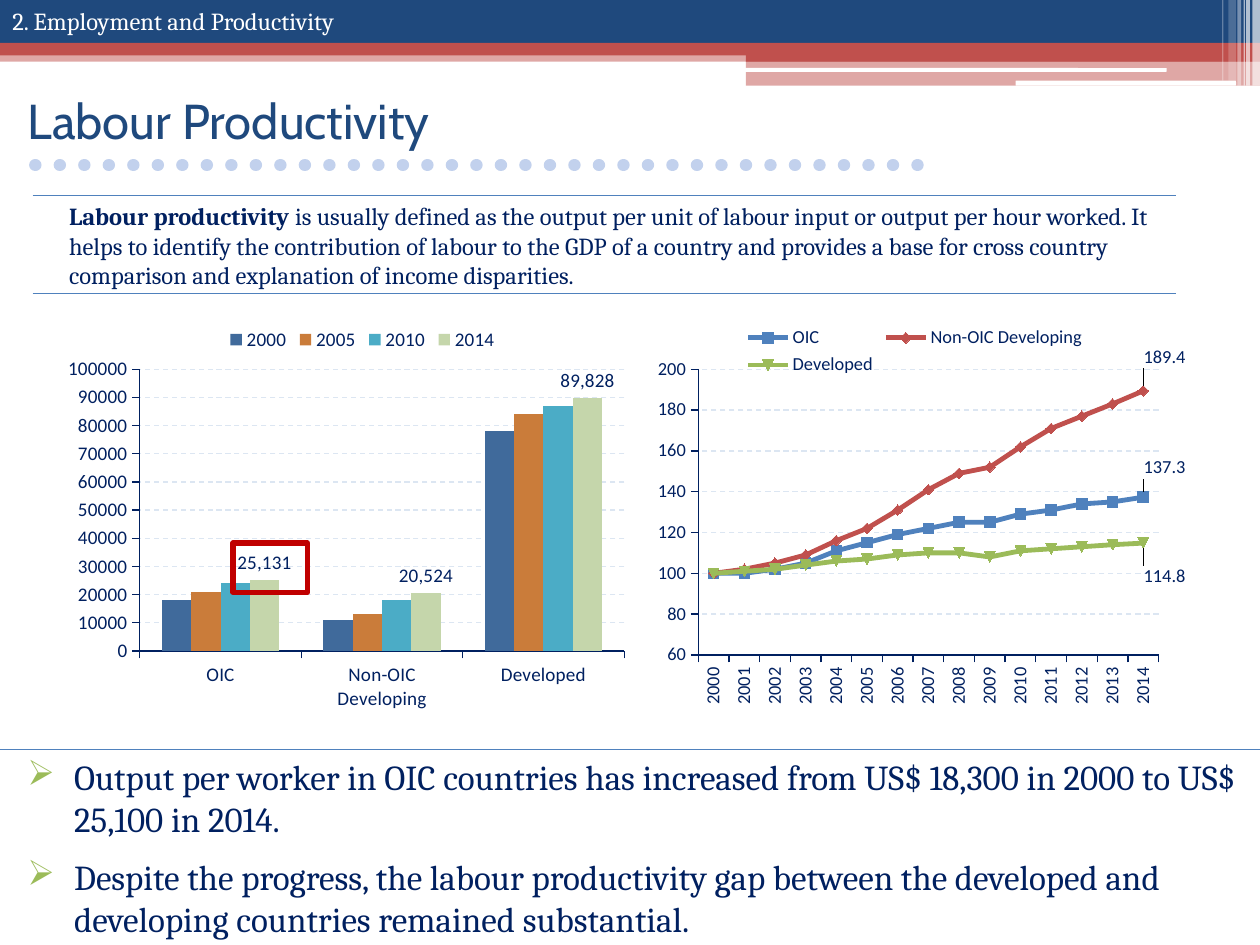
from typing import NamedTuple

from lxml.etree import SubElement
from pptx import Presentation
from pptx.chart.data import CategoryChartData
from pptx.dml.color import RGBColor
from pptx.enum.chart import XL_CHART_TYPE as ChartType
from pptx.enum.chart import XL_LABEL_POSITION as LabelPosition
from pptx.enum.chart import XL_LEGEND_POSITION as LegendPosition
from pptx.enum.dml import MSO_LINE as Dash
from pptx.enum.shapes import MSO_CONNECTOR as Connector
from pptx.enum.shapes import MSO_SHAPE as Shape
from pptx.enum.text import MSO_ANCHOR as Anchor
from pptx.oxml import parse_xml
from pptx.oxml.ns import nsdecls, qn
from pptx.util import Inches, Pt

NAVY = RGBColor(0x00, 0x20, 0x60)
BLUE = RGBColor(0x1F, 0x49, 0x7D)
RED = RGBColor(0xC0, 0x50, 0x4D)
WHITE = RGBColor(0xFF, 0xFF, 0xFF)
RULE = RGBColor(0x4F, 0x81, 0xBD)
GREEN = RGBColor(0x9B, 0xBB, 0x59)
DOTS = RGBColor(0xC2, 0xD1, 0xED)
GRID = RGBColor(0xDC, 0xE6, 0xF2)
HIGHLIGHT = RGBColor(0xC0, 0x00, 0x00)
BAR_BLUE = RGBColor(0x40, 0x6A, 0x9B)
BAR_ORANGE = RGBColor(0xCA, 0x7C, 0x3A)
BAR_TEAL = RGBColor(0x4B, 0xAC, 0xC6)
BAR_GREEN = RGBColor(0xC5, 0xD6, 0xAB)


class Band(NamedTuple):
    left: float
    top: float
    width: float
    height: float
    color: RGBColor
    opacity: int = 100
    kind: Shape = Shape.RECTANGLE


class Series(NamedTuple):
    name: str
    values: tuple
    color: RGBColor
    label_position: LabelPosition = LabelPosition.ABOVE
    label_shift: float = 0


BANDS = [
    Band(0, 0.4, 10, 0.09, RED, 50),
    Band(0, 0, 10, 0.34, BLUE),
    Band(0, 0.34, 10, 0.1, RED),
    Band(5.92, 0.39, 4.08, 0.1, RED),
    Band(5.92, 0.48, 4.08, 0.2, RED, 50),
    Band(5.91, 0.54, 3.35, 0.03, WHITE, 100, Shape.ROUNDED_RECTANGLE),
    Band(8.06, 0.64, 1.75, 0.04, WHITE, 100, Shape.ROUNDED_RECTANGLE),
    Band(9.94, 0, 0.06, 0.68, WHITE, 65),
    Band(9.89, 0, 0.03, 0.68, WHITE, 65),
    Band(9.87, 0, 0.01, 0.68, WHITE, 60),
    Band(9.82, 0, 0.03, 0.68, WHITE, 40),
    Band(9.75, 0, 0.06, 0.64, WHITE, 20),
    Band(9.7, 0, 0.01, 0.64, WHITE, 30),
]
GROUPS = ["OIC", "Non-OIC Developing", "Developed"]
OUTPUT = [
    Series("2000", (18000, 11000, 78000), BAR_BLUE),
    Series("2005", (21000, 13000, 84000), BAR_ORANGE),
    Series("2010", (24000, 18000, 87000), BAR_TEAL),
    Series("2014", (25131, 20524, 89828), BAR_GREEN),
]
YEARS = [str(year) for year in range(2000, 2015)]
INDEX = [
    Series("OIC", (100, 100, 102, 105, 111, 115, 119, 122, 125, 125, 129, 131,
                   134, 135, 137.3), RULE, LabelPosition.ABOVE, -0.02),
    Series("Non-OIC Developing", (100, 102, 105, 109, 116, 122, 131, 141, 149, 152,
                                  162, 171, 177, 183, 189.4), RED, LabelPosition.ABOVE, -0.03),
    Series("Developed", (100, 101, 102, 104, 106, 107, 109, 110, 110, 108, 111,
                         112, 113, 114, 114.8), GREEN, LabelPosition.BELOW, 0.03),
]
BULLETS = [
    "Output per worker in OIC countries has increased from US$ 18,300 in 2000 to US$ 25,100 in 2014.",
    "Despite the progress, the labour productivity gap between the developed and "
    "developing countries remained substantial.",
]


def add_band(page, band: Band) -> None:
    shape = page.shapes.add_shape(band.kind, *map(Inches, band[:4]))
    shape.shadow.inherit = False
    shape.fill.solid()
    shape.fill.fore_color.rgb = band.color
    shape.line.fill.background()
    if band.opacity < 100:
        color = shape.fill._xPr.find(qn("a:solidFill"))[0]
        SubElement(color, qn("a:alpha"), val=str(band.opacity * 1000))


def add_rule(page, left: float, right: float, top: float, color=RULE, width=0.75):
    rule = page.shapes.add_connector(
        Connector.STRAIGHT, Inches(left), Inches(top), Inches(right), Inches(top))
    rule.line.color.rgb = color
    rule.line.width = Pt(width)
    SubElement(rule._element.spPr, qn("a:effectLst"))
    return rule


def set_font(font, name: str, size: float, color: RGBColor) -> None:
    font.name, font.size = name, Pt(size)
    font.color.rgb = color


def add_text(page, left, top, width, height, paragraphs, size, color=NAVY):
    box = page.shapes.add_textbox(*map(Inches, (left, top, width, height)))
    frame = box.text_frame
    frame.word_wrap = True
    frame.text = "\n".join(paragraphs)
    for para in frame.paragraphs:
        set_font(para.font, "Cambria", size, color)
    return frame


def set_layout(element, position: int, left, top, width=None, height=None, inner=False) -> None:
    """Give a chart part a manual layout, in fractions of the chart."""
    for old in element.findall(qn("c:layout")):
        element.remove(old)
    layout = parse_xml(f"<c:layout {nsdecls('c')}><c:manualLayout/></c:layout>")
    parts = [("layoutTarget", "inner")] if inner else []
    if width:
        parts += [("xMode", "edge"), ("yMode", "edge")]
    parts += [("x", left), ("y", top)]
    if width:
        parts += [("w", width), ("h", height)]
    for tag, value in parts:
        SubElement(layout[0], qn(f"c:{tag}"), val=str(value))
    element.insert(position, layout)


def add_chart(page, kind, left, width, size, categories, rows, scale, plot_layout, legend_layout):
    data = CategoryChartData(number_format="General")
    data.categories = categories
    for row in rows:
        data.add_series(row.name, row.values)
    chart = page.shapes.add_chart(
        kind, *map(Inches, (left, 2.49, width, 3.15)), data).chart
    set_font(chart.font, "Calibri", size, NAVY)
    chart.has_title = False
    chart.has_legend = True
    chart.legend.position = LegendPosition.TOP
    chart.legend.include_in_layout = False
    set_layout(chart.legend._element, 1, *legend_layout)
    set_layout(chart._chartSpace.chart.plotArea, 0, *plot_layout, inner=True)
    axis = chart.value_axis
    axis.minimum_scale, axis.maximum_scale, axis.major_unit = scale
    axis.tick_labels.number_format = "0"
    axis.tick_labels.number_format_is_linked = False
    grid = axis.major_gridlines.format.line
    grid.color.rgb, grid.width, grid.dash_style = GRID, Pt(0.75), Dash.DASH
    for line in (axis.format.line, chart.category_axis.format.line):
        line.color.rgb, line.width = NAVY, Pt(0.75)
    chart.plots[0].vary_by_categories = False
    return chart


def add_output_chart(page) -> None:
    chart = add_chart(page, ChartType.COLUMN_CLUSTERED, 0.54, 4.46, 11, GROUPS, OUTPUT,
                      (0, 100000, 10000), (0.12, 0.14, 0.87, 0.71), (0.27, 0.02, 0.5, 0.09))
    plot = chart.plots[0]
    plot.gap_width, plot.overlap = 150, 0
    for series, row in zip(plot.series, OUTPUT):
        series.format.fill.solid()
        series.format.fill.fore_color.rgb = row.color
    labels = plot.series[-1].data_labels
    labels.show_value = True
    labels.number_format, labels.number_format_is_linked = "#,##0", False
    labels.position = LabelPosition.OUTSIDE_END


def add_index_chart(page) -> None:
    chart = add_chart(page, ChartType.LINE_MARKERS, 5.16, 4.25, 10.5, YEARS, INDEX,
                      (60, 200, 20), (0.09, 0.14, 0.86, 0.72), (0.17, 0.02, 0.65, 0.15))
    labels = chart.category_axis.tick_labels
    set_font(labels.font, "Calibri", 10.5, NAVY)
    chart.category_axis._element.find(qn("c:txPr"))[0].set("rot", "-5400000")
    for series, row in zip(chart.plots[0].series, INDEX):
        series.smooth = False
        series.format.line.color.rgb = row.color
        series.format.line.width = Pt(2.75)
        series.marker.size = 6
        series.marker.format.fill.solid()
        series.marker.format.fill.fore_color.rgb = row.color
        series.marker.format.line.color.rgb = row.color
        series.data_labels.show_value = False
        label = series.points[len(YEARS) - 1].data_label
        set_font(label.font, "Calibri", 10.5, NAVY)
        label.position = row.label_position
        set_layout(label._dLbl, 1, 0.04, row.label_shift)


def add_bullets(page) -> None:
    frame = add_text(page, 0, 5.95, 10, 1.55, BULLETS, 20)
    for para in frame.paragraphs:
        para.space_before, para.space_after = Pt(3), Pt(6)
        properties = para._p.get_or_add_pPr()
        properties.set("marL", str(Inches(0.49)))
        properties.set("indent", str(Inches(-0.37)))
        bullet = parse_xml(f'<a:buClr {nsdecls("a")}><a:srgbClr val="{GREEN}"/></a:buClr>')
        properties.find(qn("a:defRPr")).addprevious(bullet)
        bullet.addnext(parse_xml(f'<a:buChar {nsdecls("a")} char="➢"/>'))


def add_definition(page) -> None:
    frame = add_text(page, 0.33, 1.55, 9, 0.63, ["Labour productivity "], 14)
    para = frame.paragraphs[0]
    para.runs[0].font.bold = True
    para.add_run().text = (
        "is usually defined as the output per unit of labour input or output per hour worked. "
        "It helps to identify the contribution of labour to the GDP of a country and provides "
        "a base for cross country comparison and explanation of income disparities.")
    para.space_before = Pt(3)
    para._p.get_or_add_pPr().set("marL", str(Inches(0.12)))
    for top in (1.55, 2.33):
        add_rule(page, 0.26, 9.33, top)


def main() -> None:
    deck = Presentation()
    deck.slide_width, deck.slide_height = Inches(10), Inches(7.5)
    page = deck.slides.add_slide(deck.slide_layouts[5])
    for band in BANDS:
        add_band(page, band)
    dots = add_rule(page, 0.28, 7.44, 1.31, DOTS, 7)
    dots.line.dash_style = Dash.ROUND_DOT
    dots.line._ln.set("cap", "rnd")

    title = page.shapes.title
    title.left, title.top, title.width, title.height = map(Inches, (0.12, 0.52, 9.37, 0.87))
    title.text_frame.text = "Labour Productivity"
    title.text_frame.vertical_anchor = Anchor.MIDDLE
    heading = title.text_frame.paragraphs[0]
    heading.alignment = 1
    set_font(heading.font, "Cabin", 28, BLUE)

    add_text(page, 0, 0, 4.37, 0.34, ["2. Employment and Productivity"], 14, WHITE)
    add_definition(page)
    add_output_chart(page)
    add_index_chart(page)
    add_rule(page, 0, 10, 5.95)
    add_bullets(page)
    frame = page.shapes.add_shape(Shape.RECTANGLE, *map(Inches, (1.85, 4.31, 0.59, 0.39)))
    frame.shadow.inherit = False
    frame.fill.background()
    frame.line.color.rgb, frame.line.width = HIGHLIGHT, Pt(3)
    deck.save("out.pptx")


if __name__ == "__main__":
    main()
